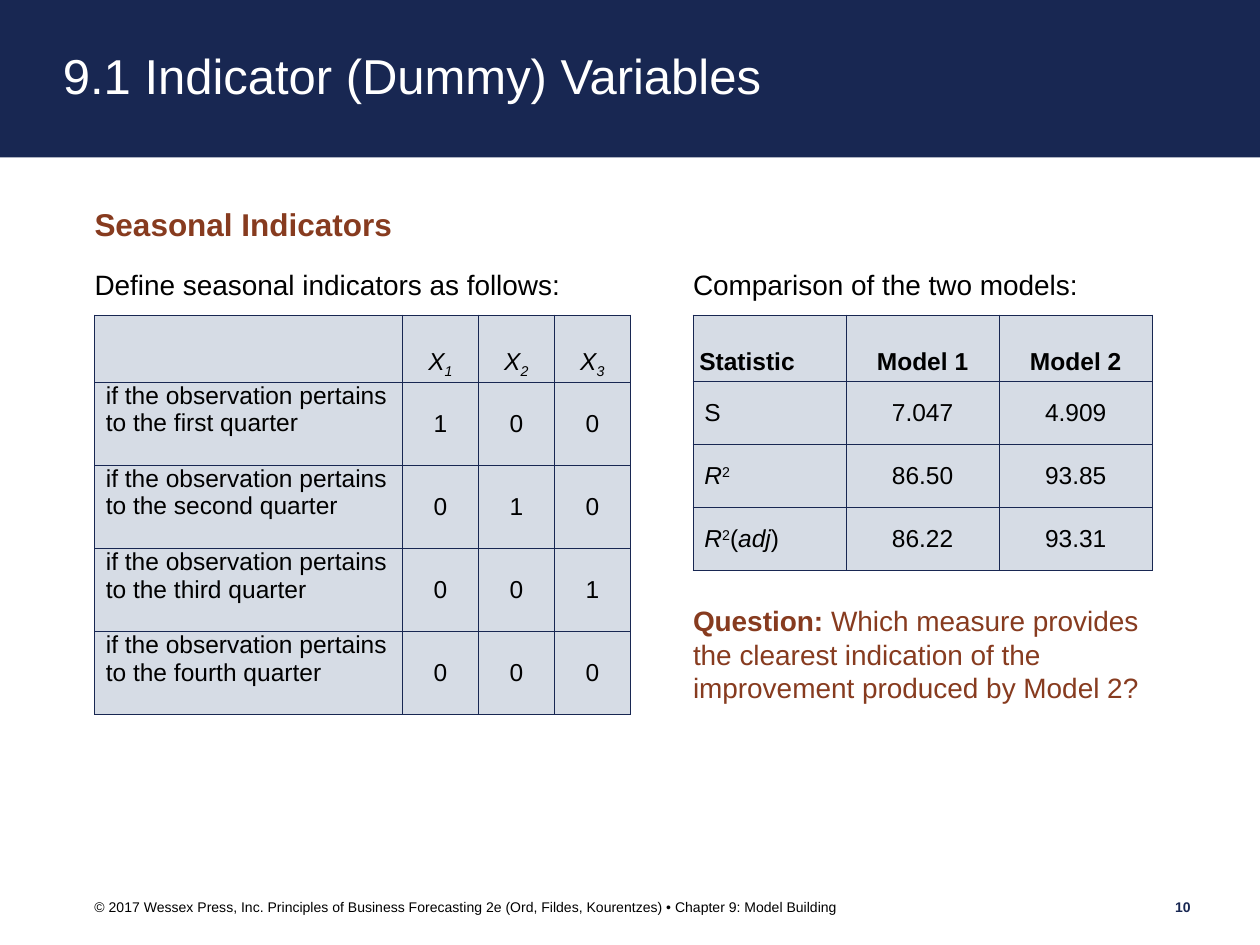
"""Build the seasonal indicators slide with two tables and a closing question."""
import pptx
import pptx.dml.color
import pptx.enum.shapes
import pptx.enum.text
import pptx.oxml
import pptx.oxml.ns
import pptx.util

COLORS = {"navy": "182752", "rust": "873B1F", "cell": "D6DCE5", "black": "000000", "white": "FFFFFF"}
ALIGN = pptx.enum.text.PP_ALIGN
ANCHOR = pptx.enum.text.MSO_ANCHOR
BASELINES = {"sub": "-25000", "sup": "30000"}

deck = pptx.Presentation()
deck.slide_width = pptx.util.Inches(10)
deck.slide_height = pptx.util.Inches(7.5)
page = deck.slides.add_slide(deck.slide_layouts[6])
COLUMN = deck.slide_width / 40
ROW = deck.slide_height / 30
LEFT, RIGHT, TABLE_TOP = 3, 22, 10


def write(frame, runs, size, color="black", align=ALIGN.LEFT, bold=False, italic=False, spacing=None):
    para = frame.paragraphs[0]
    para.alignment = align
    para.line_spacing = spacing
    para.font.name = "Arial"
    para.font.size = pptx.util.Pt(size)
    para.font.color.rgb = pptx.dml.color.RGBColor.from_string(COLORS[color])
    para.font.bold = bold
    para.font.italic = italic
    for text, style in runs:
        span = para.add_run()
        span.text = text
        if style == "bold":
            span.font.bold = True
        elif style == "italic":
            span.font.italic = True
        elif style in BASELINES:
            span._r.get_or_add_rPr().set("baseline", BASELINES[style])


def add_grid(left, widths, heights):
    frame = page.shapes.add_table(
        len(heights), len(widths), round(left * COLUMN), round(TABLE_TOP * ROW),
        round(sum(widths) * COLUMN), round(sum(heights) * ROW))
    table = frame.table
    table.first_row = table.horz_banding = False
    for column, width in zip(table.columns, widths):
        column.width = round(width * COLUMN)
    for row, height in zip(table.rows, heights):
        row.height = round(height * ROW)
    for cell in table.iter_cells():
        cell.margin_top = cell.margin_bottom = 0
        cell.margin_left = cell.margin_right = round(0.36 * COLUMN)
        cell.vertical_anchor = ANCHOR.MIDDLE
        properties = cell._tc.get_or_add_tcPr()
        for side in ("lnL", "lnR", "lnT", "lnB"):
            properties.append(pptx.oxml.parse_xml(
                f'<a:{side} {pptx.oxml.ns.nsdecls("a")} w="6350"><a:solidFill>'
                f'<a:srgbClr val="{COLORS["navy"]}"/></a:solidFill></a:{side}>'))
        cell.fill.solid()
        cell.fill.fore_color.rgb = pptx.dml.color.RGBColor.from_string(COLORS["cell"])
    return table


banner = page.shapes.add_shape(
    pptx.enum.shapes.MSO_SHAPE.RECTANGLE, 0, 0, deck.slide_width, round(5 * ROW))
banner.shadow.inherit = False
banner.fill.solid()
banner.fill.fore_color.rgb = pptx.dml.color.RGBColor.from_string(COLORS["navy"])
banner.line.fill.background()
banner.text_frame.margin_left = round(2 * COLUMN)
banner.text_frame.margin_right = 0
banner.text_frame.vertical_anchor = ANCHOR.MIDDLE
write(banner.text_frame, [("9.1 Indicator (Dummy) Variables", "")], 28, "white", spacing=0.9)

footer = ("© 2017 Wessex Press, Inc. Principles of Business Forecasting 2e "
          "(Ord, Fildes, Kourentzes) • Chapter 9: Model Building")
question = "Which measure provides the clearest indication of the improvement produced by Model 2?"
boxes = [
    (LEFT, 6.5, 33, 1.5, [("Seasonal Indicators", "bold")], 18, "rust", ALIGN.LEFT, ANCHOR.TOP),
    (LEFT, 8.5, 17, 1.5, [("Define seasonal indicators as follows:", "")], 16, "black", ALIGN.LEFT, ANCHOR.TOP),
    (RIGHT, 8.5, 17, 1.5, [("Comparison of the two models:", "")], 16, "black", ALIGN.LEFT, ANCHOR.TOP),
    (RIGHT, 19.16, 14.6, 3.24, [("Question: ", "bold"), (question, "")], 16, "rust", ALIGN.LEFT, ANCHOR.TOP),
    (LEFT, 28.4, 32.56, 0.8, [(footer, "")], 8, "black", ALIGN.LEFT, ANCHOR.MIDDLE),
    (36, 28.4, 1.8, 0.8, [("10", "bold")], 8, "navy", ALIGN.RIGHT, ANCHOR.MIDDLE),
]
for left, top, width, height, runs, size, color, align, anchor in boxes:
    box = page.shapes.add_textbox(
        round(left * COLUMN), round(top * ROW), round(width * COLUMN), round(height * ROW))
    frame = box.text_frame
    frame.word_wrap = True
    frame.margin_left = frame.margin_right = frame.margin_top = frame.margin_bottom = 0
    frame.vertical_anchor = anchor
    write(frame, runs, size, color, align)

indicators = add_grid(LEFT, [9.78, 2.41, 2.41, 2.41], [2.12] + [2.64] * 4)
for number in range(1, 4):
    write(indicators.cell(0, number).text_frame, [("X", ""), (str(number), "sub")], 14,
          align=ALIGN.CENTER, italic=True, spacing=2.0)
for number, quarter in enumerate(["first", "second", "third", "fourth"], start=1):
    label = indicators.cell(number, 0)
    label.vertical_anchor = ANCHOR.TOP
    write(label.text_frame, [(f"if the observation pertains to the {quarter} quarter", "")], 14)
    for column in range(1, 4):
        write(indicators.cell(number, column).text_frame, [(str(int(column == number)), "")], 14,
              align=ALIGN.CENTER)

models = add_grid(RIGHT, [4.86] * 3, [2.12, 2, 2, 2])
for column, heading in enumerate(["Statistic", "Model 1", "Model 2"]):
    cell = models.cell(0, column)
    cell.margin_left = cell.margin_right = 0 if column else round(0.2 * COLUMN)
    write(cell.text_frame, [(heading, "")], 14, align=ALIGN.CENTER if column else ALIGN.LEFT,
          bold=True, spacing=2.0)
r_squared = [("R", "italic"), ("2", "sup")]
statistics = [
    ([("S", "")], "7.047", "4.909"),
    (r_squared, "86.50", "93.85"),
    (r_squared + [("(", ""), ("adj", "italic"), (")", "")], "86.22", "93.31"),
]
for row, (name, *values) in enumerate(statistics, start=1):
    write(models.cell(row, 0).text_frame, name, 14)
    for column, value in enumerate(values, start=1):
        write(models.cell(row, column).text_frame, [(value, "")], 14, align=ALIGN.CENTER)

deck.save("out.pptx")
